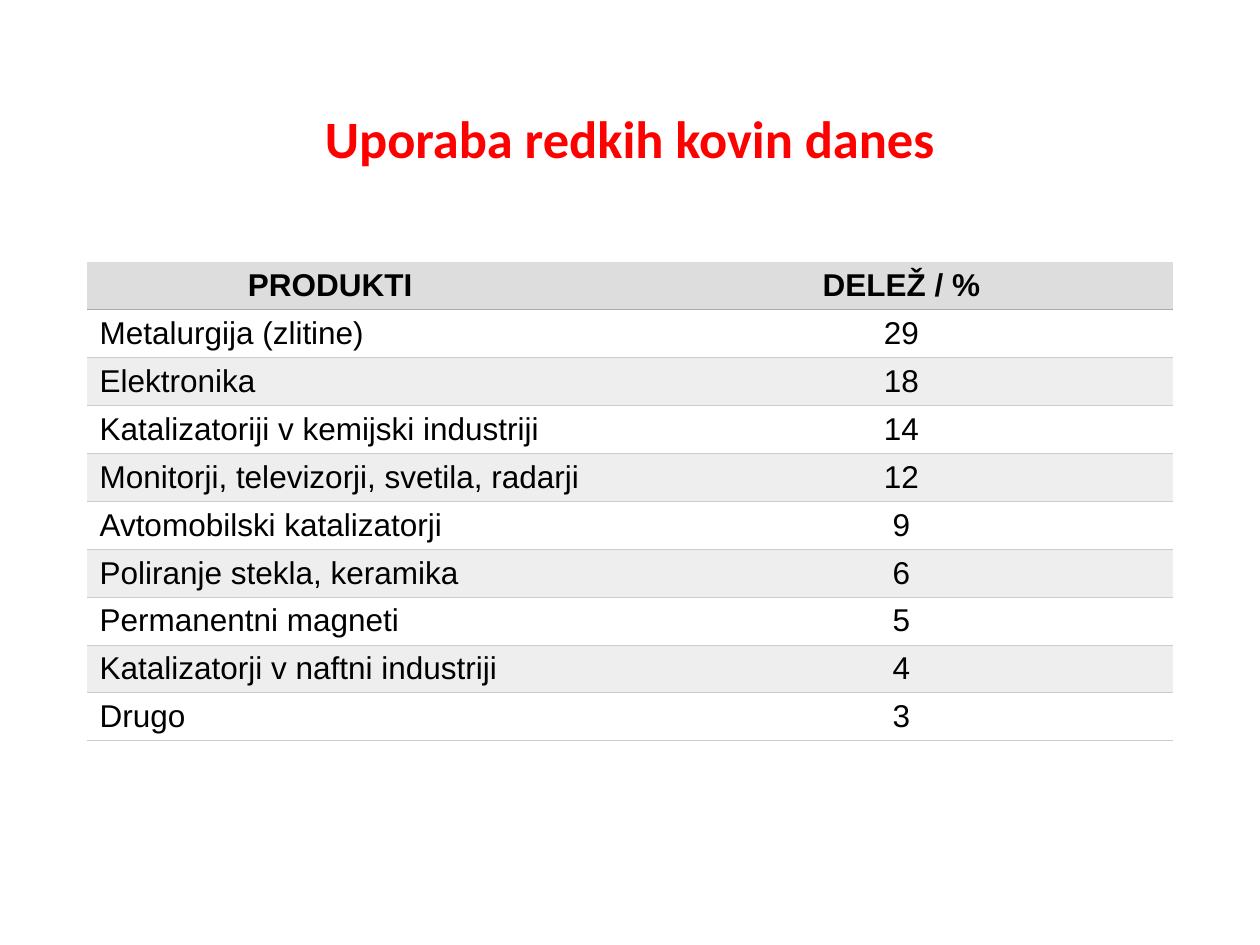
from pptx import Presentation
from pptx.dml.color import RGBColor
from pptx.enum.text import MSO_ANCHOR, PP_ALIGN
from pptx.oxml import parse_xml
from pptx.oxml.ns import nsdecls
from pptx.util import Emu, Pt

EMU_PER_PX = 914400 // 126
LEFT, CENTER = PP_ALIGN.LEFT, PP_ALIGN.CENTER
MIDDLE = MSO_ANCHOR.MIDDLE

TITLE_FORMAT = {"name": "Calibri", "size": Pt(30), "bold": True}
HEADER_FORMAT = {"name": "Arial", "size": Pt(18), "bold": True}
BODY_FORMAT = {"name": "Arial", "size": Pt(18), "bold": False}

HEADERS = ("PRODUKTI", "DELEŽ\u00a0/\u00a0%")
SHARES = [
    ("Metalurgija (zlitine)", 29),
    ("Elektronika", 18),
    ("Katalizatoriji v kemijski industriji", 14),
    ("Monitorji, televizorji, svetila, radarji", 12),
    ("Avtomobilski katalizatorji", 9),
    ("Poliranje stekla, keramika", 6),
    ("Permanentni magneti", 5),
    ("Katalizatorji v naftni industriji", 4),
    ("Drugo", 3),
]


def px(length):
    return Emu(round(length * EMU_PER_PX))


def set_color(color_format, value):
    color_format.rgb = RGBColor.from_string(value)


def write(paragraph, text, formats, color, alignment):
    paragraph.alignment = alignment
    run = paragraph.add_run()
    run.text = text
    for name, value in formats.items():
        setattr(run.font, name, value)
    set_color(run.font.color, color)


def set_borders(cell, top, bottom):
    """Draw half-point rules above and below; None leaves an edge empty."""
    properties = cell._tc.get_or_add_tcPr()
    edges = (("lnL", None), ("lnR", None), ("lnT", top), ("lnB", bottom))
    for position, (edge, color) in enumerate(edges):
        fill = "<a:noFill/>"
        if color:
            fill = f'<a:solidFill><a:srgbClr val="{color}"/></a:solidFill>'
        line = parse_xml(f'<a:{edge} {nsdecls("a")} w="6350">{fill}</a:{edge}>')
        properties.insert(position, line)


def add_title(slide, left, top, width, height):
    shape = slide.shapes.add_textbox(px(left), px(top), px(width), px(height))
    frame = shape.text_frame
    frame.word_wrap = True
    frame.vertical_anchor = MIDDLE
    paragraph = frame.paragraphs[0]
    paragraph.line_spacing = 0.9
    write(paragraph, "Uporaba redkih kovin danes", TITLE_FORMAT, "FF0000", CENTER)


def add_share_table(slide, left, top, width, height):
    rows = [HEADERS, *SHARES]
    table = slide.shapes.add_table(
        len(rows), len(HEADERS), px(left), px(top), px(width), px(height)
    ).table
    for row in table.rows:
        row.height = px(height / len(rows))

    rule_above = None
    for row_index, values in enumerate(rows):
        is_header = row_index == 0
        rule_below = "AAAAAA" if is_header else "CCCCCC"
        band = "DDDDDD" if is_header else ("EEEEEE", "FFFFFF")[row_index % 2]
        formats = HEADER_FORMAT if is_header else BODY_FORMAT
        for column_index, value in enumerate(values):
            cell = table.cell(row_index, column_index)
            cell.vertical_anchor = MIDDLE
            cell.margin_top = cell.margin_bottom = px(5)
            cell.fill.solid()
            set_color(cell.fill.fore_color, band)
            set_borders(cell, rule_above, rule_below)
            alignment = CENTER if column_index else LEFT
            write(cell.text_frame.paragraphs[0], str(value), formats, "000000", alignment)
        rule_above = rule_below

    # The first heading is indented towards the middle of its column
    table.cell(0, 0).margin_left = px(161)


def main():
    presentation = Presentation()
    presentation.slide_width = px(1260)
    presentation.slide_height = px(945)
    slide = presentation.slides.add_slide(presentation.slide_layouts[6])
    add_title(slide, 87, 50, 1086, 183)
    add_share_table(slide, 87, 262, 1086, 479)
    presentation.save("out.pptx")


if __name__ == "__main__":
    main()
